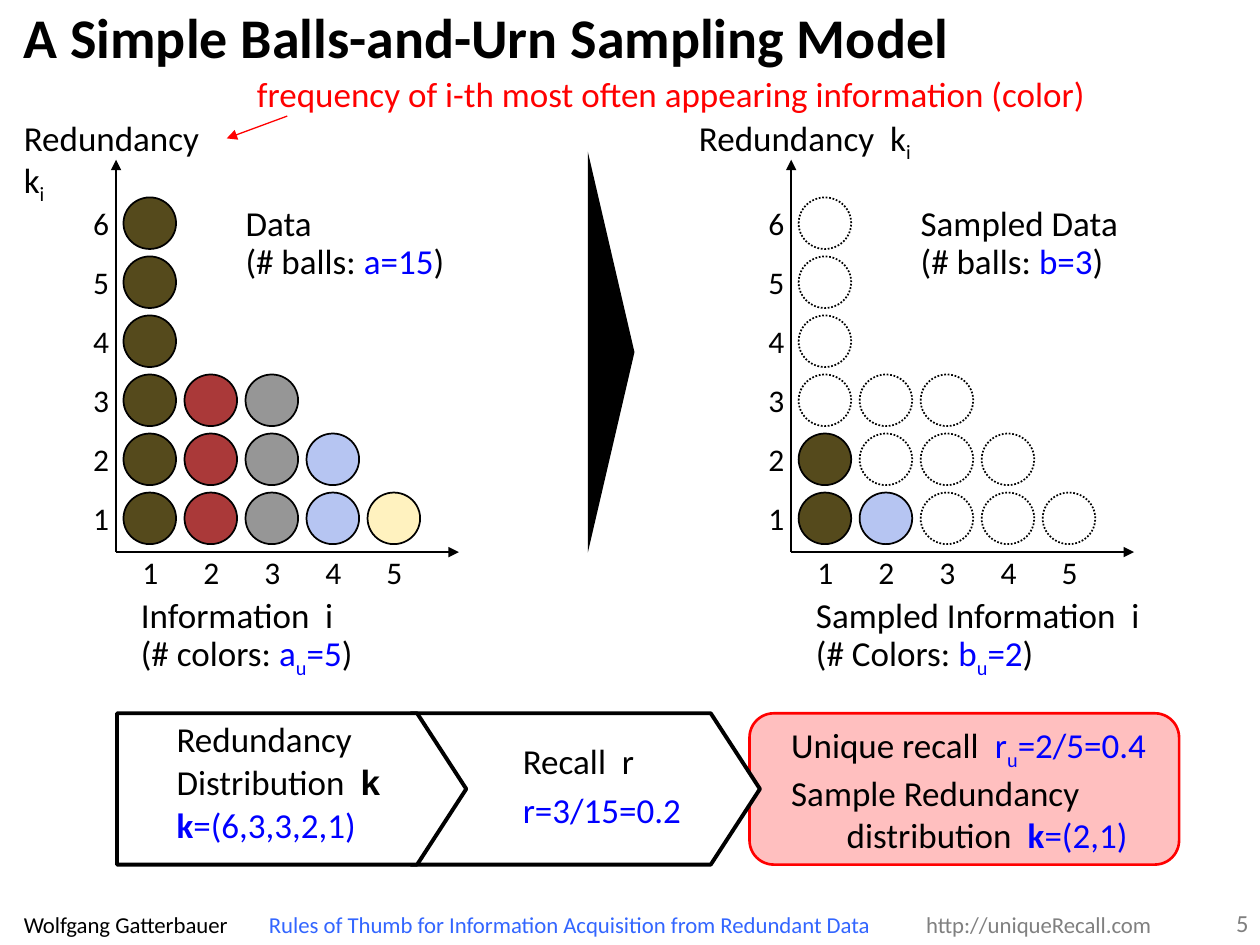
from lxml import etree
from pptx import Presentation
from pptx.dml.color import RGBColor
from pptx.enum.dml import MSO_LINE
from pptx.enum.shapes import MSO_CONNECTOR, MSO_SHAPE
from pptx.enum.text import MSO_ANCHOR, MSO_AUTO_SIZE, PP_ALIGN
from pptx.oxml.ns import qn
from pptx.util import Cm, Pt

DOT = MSO_LINE.ROUND_DOT
STRAIGHT = MSO_CONNECTOR.STRAIGHT
OVAL, ROUNDED, TRIANGLE = MSO_SHAPE.OVAL, MSO_SHAPE.ROUNDED_RECTANGLE, MSO_SHAPE.ISOSCELES_TRIANGLE
CENTER, RIGHT = PP_ALIGN.CENTER, PP_ALIGN.RIGHT
BOTTOM = MSO_ANCHOR.BOTTOM
FIT = MSO_AUTO_SIZE.SHAPE_TO_FIT_TEXT

BLACK, WHITE = RGBColor(0, 0, 0), RGBColor(255, 255, 255)
RED, BLUE = RGBColor(255, 0, 0), RGBColor(0, 0, 255)
LINK_BLUE, GRAY = RGBColor(0x33, 0x66, 0xFF), RGBColor(0x80, 0x80, 0x80)
PAGE_GRAY = RGBColor(0x7F, 0x7F, 0x7F)
OLIVE, BRICK = RGBColor(0x55, 0x4A, 0x1C), RGBColor(0xAA, 0x39, 0x39)
SILVER, SKY = RGBColor(0x96, 0x96, 0x96), RGBColor(0xB6, 0xC5, 0xF2)
CREAM = RGBColor(0xFF, 0xF2, 0xBF)

# Content: a span is (text, color, extra formats)
PLAIN, BOLD, SUB = {}, {"bold": True}, {"baseline": "-25000"}
REDUNDANCY = [[("Redundancy  k", BLACK, PLAIN), ("i", BLACK, SUB)]]
COLUMNS = [(6, OLIVE), (3, BRICK), (3, SILVER), (2, SKY), (1, CREAM)]
PANELS = [
    {"left": 0, "drawn": COLUMNS, "redundancy_width": 4.22, "wrap": True,
     "texts": [
         (4.95, 4.06, 1.37, [[("Data", BLACK, PLAIN)]]),
         (4.95, 4.83, 4.04, [[("(# balls: ", BLACK, PLAIN), ("a=15", BLUE, PLAIN),
                              (")", BLACK, PLAIN)]]),
         (2.84, 11.96, 3.94, [[("Information  i", BLACK, PLAIN)]]),
         (2.84, 12.73, 4.34, [[("(# colors: ", BLACK, PLAIN), ("a", BLUE, PLAIN),
                               ("u", BLUE, SUB), ("=5", BLUE, PLAIN), (")", BLACK, PLAIN)]])]},
    {"left": 13.61, "drawn": [(2, OLIVE), (1, SKY), (0, None), (0, None), (0, None)],
     "redundancy_width": 4.34, "wrap": False,
     "texts": [
         (4.95, 4.06, 4.01, [[("Sampled Data", BLACK, PLAIN)]]),
         (4.95, 4.83, 3.71, [[("(# balls: ", BLACK, PLAIN), ("b=3", BLUE, PLAIN),
                              (")", BLACK, PLAIN)]]),
         (2.84, 11.96, 6.6, [[("Sampled Information  i", BLACK, PLAIN)]]),
         (2.84, 12.73, 4.47, [[("(# Colors: ", BLACK, PLAIN), ("b", BLUE, PLAIN),
                               ("u", BLUE, SUB), ("=2", BLUE, PLAIN), (")", BLACK, PLAIN)]])]},
]
TITLE = [[("A Simple Balls-and-Urn Sampling Model", BLACK, BOLD)]]
CALLOUT = [[("frequency of i-th most often appearing information (color)", RED, PLAIN)]]
DISTRIBUTION = [
    [("Redundancy", BLACK, PLAIN)],
    [("Distribution  ", BLACK, PLAIN), ("k", BLACK, {"bold": True, "name": "Arial"})],
    [("k", BLUE, BOLD), ("=(6,3,3,2,1)", BLUE, PLAIN)]]
RECALL = [[("Recall  r", BLACK, PLAIN)], [("r=3/15=0.2", BLUE, PLAIN)]]
RESULT = [
    [("Unique recall  ", BLACK, PLAIN), ("r", BLUE, PLAIN), ("u", BLUE, SUB),
     ("=2/5=0.4", BLUE, PLAIN)],
    [("Sample Redundancy \vdistribution  ", BLACK, PLAIN), ("k", BLUE, BOLD),
     ("=(2,1)", BLUE, PLAIN)]]
FOOTER = [[("Wolfgang Gatterbauer\t", BLACK, PLAIN),
           ("Rules of Thumb for Information Acquisition from Redundant Data\t", LINK_BLUE, PLAIN),
           ("http://uniqueRecall.com", GRAY, PLAIN)]]
FOOTER_TABS = [4.94, 18.19]

# Grid of balls, in cm
BALL_LEFT, BALL_TOP, BALL_WIDTH, BALL_HEIGHT = 2.49, 9.93, 1.06, 1.04
COLUMN_STEP, ROW_STEP = 1.23, 1.19
AXIS_LEFT, AXIS_RIGHT, AXIS_TOP, AXIS_BOTTOM = 2.34, 9.25, 3.22, 11.13
DIGIT_WIDTH, DIGIT_HEIGHT = 0.3, 0.74
STEP_TOP, STEP_HEIGHT = 14.38, 3.05

deck = Presentation()
deck.slide_width, deck.slide_height = Cm(25.4), Cm(19.05)
page = deck.slides.add_slide(deck.slide_layouts[6])


def add_text(left, top, width, height, paragraphs, size=20, wrap=False, anchor=None,
             hanging=0, tabs=(), **layout):
    box = page.shapes.add_textbox(Cm(left), Cm(top), Cm(width), Cm(height))
    frame = box.text_frame
    settings = {"margin_left": 0, "margin_right": 0, "margin_top": 0, "margin_bottom": 0,
                "word_wrap": wrap, "auto_size": FIT, "vertical_anchor": anchor}
    for name, value in settings.items():
        setattr(frame, name, value)
    for index, spans in enumerate(paragraphs):
        para = frame.add_paragraph() if index else frame.paragraphs[0]
        for name, value in layout.items():
            setattr(para, name, value)
        properties = para._p.get_or_add_pPr()
        if hanging:
            properties.set("marL", str(Cm(hanging)))
            properties.set("indent", str(-Cm(hanging)))
        if tabs:
            stops = etree.SubElement(properties, qn("a:tabLst"))
            for place in tabs:
                etree.SubElement(stops, qn("a:tab"), pos=str(Cm(place)), algn="l")
        for text, color, extra in spans:
            for part, piece in enumerate(text.split("\v")):
                if part:
                    para.add_line_break()
                add_span(para, piece, color, {"name": "Calibri", "size": Pt(size), **extra})


def add_span(para, text, color, formats):
    span = para.add_run()
    span.text = text
    span.font.color.rgb = color
    for name, value in formats.items():
        if name == "baseline":
            span._r.get_or_add_rPr().set(name, value)
        else:
            setattr(span.font, name, value)


def paint(shape, fill, line=BLACK, width=1):
    shape.shadow.inherit = False
    shape.fill.solid()
    shape.fill.fore_color.rgb = fill
    if line is None:
        shape.line.fill.background()
    else:
        shape.line.color.rgb = line
        shape.line.width = Pt(width)


def add_shape(kind, left, top, width, height, *style):
    shape = page.shapes.add_shape(kind, Cm(left), Cm(top), Cm(width), Cm(height))
    paint(shape, *style)
    return shape


def add_arrow(start, end, color=BLACK, width=1):
    arrow = page.shapes.add_connector(STRAIGHT, *(Cm(value) for value in start + end))
    arrow.line.color.rgb = color
    arrow.line.width = Pt(width)
    etree.SubElement(arrow.line._get_or_add_ln(), qn("a:tailEnd"), type="triangle")
    etree.SubElement(arrow._element.spPr, qn("a:effectLst"))


def add_step(left):
    """Pentagon that points to the next step."""
    middle, bottom = STEP_TOP + STEP_HEIGHT / 2, STEP_TOP + STEP_HEIGHT
    corners = [(left + 6.05, STEP_TOP), (left + 7.04, middle),
               (left + 6.05, bottom), (left, bottom)]
    builder = page.shapes.build_freeform(Cm(left), Cm(STEP_TOP))
    builder.add_line_segments([(Cm(x), Cm(y)) for x, y in corners], close=True)
    paint(builder.convert_to_shape(), WHITE, BLACK, 2.25)


def add_panel(panel):
    left = panel["left"]
    # Balls and column numbers
    for column, ((total, _), (drawn, color)) in enumerate(zip(COLUMNS, panel["drawn"])):
        x = left + BALL_LEFT + column * COLUMN_STEP
        for row in range(total):
            ball = add_shape(OVAL, x, BALL_TOP - row * ROW_STEP, BALL_WIDTH, BALL_HEIGHT,
                             color if row < drawn else WHITE)
            if row >= drawn:
                ball.line.dash_style = DOT
        add_text(x + (BALL_WIDTH - DIGIT_WIDTH) / 2, 11.15, DIGIT_WIDTH, DIGIT_HEIGHT,
                 [[(str(column + 1), BLACK, PLAIN)]], 18, alignment=CENTER)
    # Row numbers
    for row in range(COLUMNS[0][0]):
        add_text(left + 1.88, 10.06 - row * ROW_STEP, DIGIT_WIDTH, DIGIT_HEIGHT,
                 [[(str(row + 1), BLACK, PLAIN)]], 18, alignment=RIGHT)
    # Axes and labels
    origin = (left + AXIS_LEFT, AXIS_BOTTOM)
    add_arrow(origin, (left + AXIS_RIGHT, AXIS_BOTTOM))
    add_arrow(origin, (left + AXIS_LEFT, AXIS_TOP))
    add_text(left + 0.48, 2.34, panel["redundancy_width"], 0.86, REDUNDANCY, wrap=panel["wrap"])
    for x, y, width, paragraphs in panel["texts"]:
        add_text(left + x, y, width, 0.86, paragraphs)


# Heading and footer
add_text(0.48, 0.05, 18.82, 1.37, TITLE, 32)
add_text(0.48, 18.36, 23.14, 0.56, FOOTER, 13, wrap=True, anchor=BOTTOM, tabs=FOOTER_TABS)
add_text(24.59, 18.31, 0.58, 0.61, [[("5", PAGE_GRAY, PLAIN)]], 14, alignment=RIGHT)

# Data and sampled data, with the sampling arrow between them
for panel in PANELS:
    add_panel(panel)
add_text(5.18, 1.47, 16.89, 0.86, CALLOUT)
add_arrow((5.79, 2.34), (4.57, 2.79), RED, 0.75)
add_shape(TRIANGLE, 8.28, 6.63, 8.08, 0.94, BLACK, None).rotation = 90

# Process from distribution and recall to the result
result = add_shape(ROUNDED, 15.11, STEP_TOP, 8.66, STEP_HEIGHT, RED, RED, 1.5)
result.adjustments[0] = 0.16
tint = result._element.spPr.find(qn("a:solidFill"))[0]
etree.SubElement(tint, qn("a:alpha"), val="25000")
for step_left in (8.28, 2.36):
    add_step(step_left)
add_text(3.56, 14.6, 4.19, 2.54, DISTRIBUTION, line_spacing=0.85, space_after=Pt(4))
add_text(10.54, 14.91, 3.23, 1.88, RECALL, space_after=Pt(4))
add_text(15.95, 14.58, 7.26, 2.57, RESULT, hanging=1.12)

deck.save("out.pptx")
